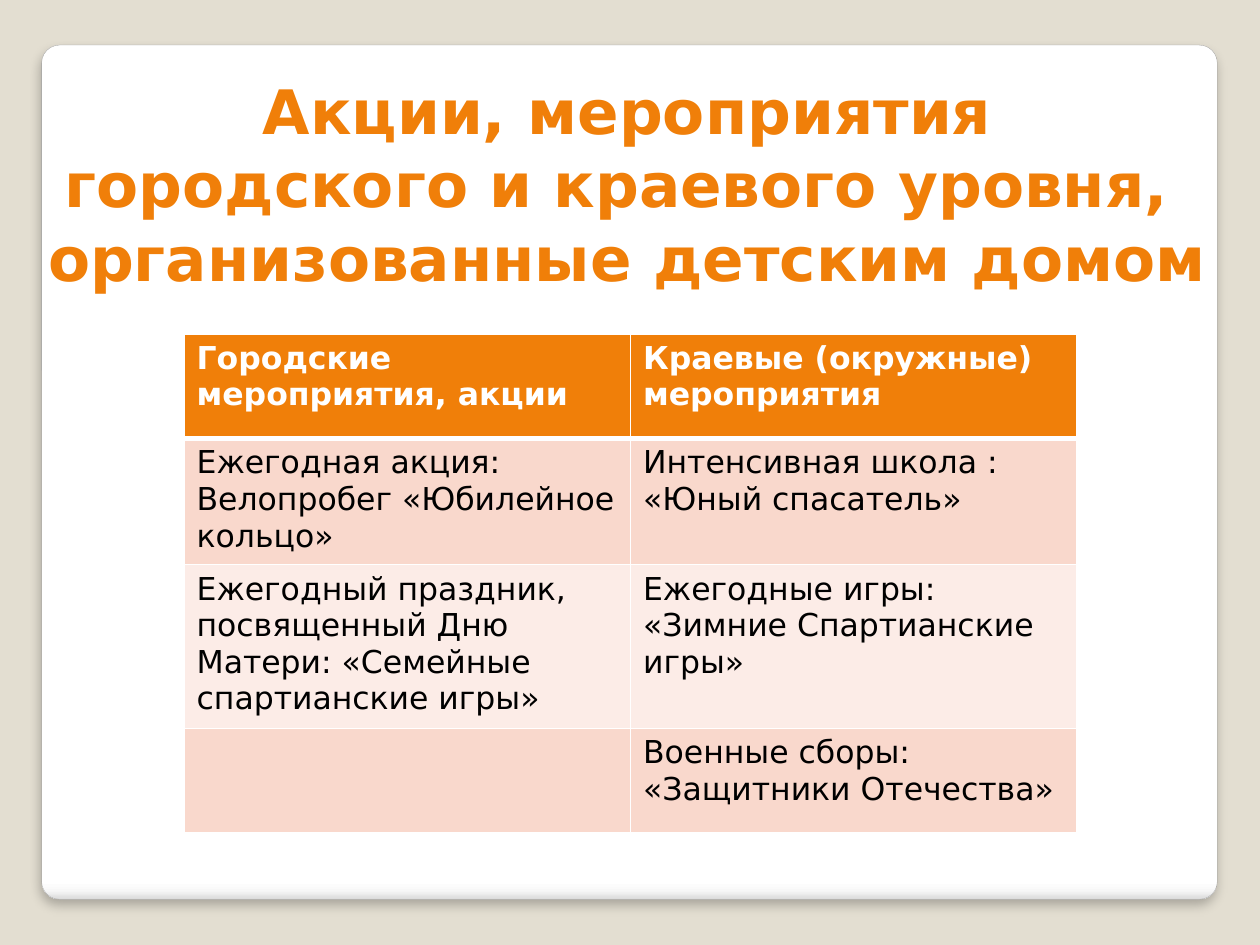
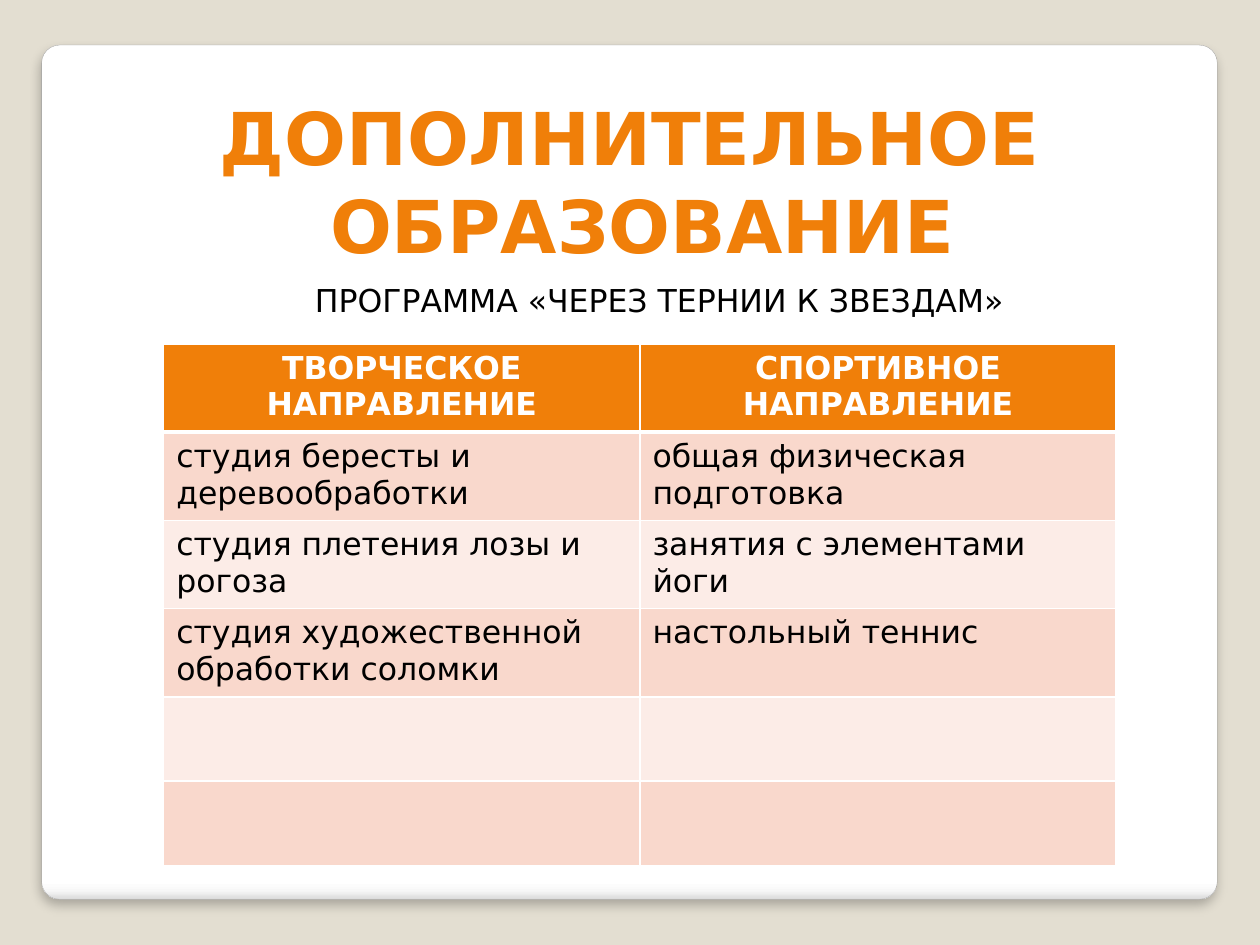
from lxml import etree
from pptx import Presentation
from pptx.dml.color import RGBColor
from pptx.enum.shapes import MSO_SHAPE
from pptx.enum.text import MSO_ANCHOR, PP_ALIGN
from pptx.oxml import parse_xml
from pptx.oxml.ns import nsdecls, qn
from pptx.util import Cm, Pt

ROUNDED = MSO_SHAPE.ROUNDED_RECTANGLE
MIDDLE = MSO_ANCHOR.MIDDLE
LEFT, CENTER = PP_ALIGN.LEFT, PP_ALIGN.CENTER

COLORS = {
    "backdrop": "E3DED1", "card": "FFFFFF", "card_line": "A4A4A4",
    "card_low": "F7F7F7", "card_edge": "DADADA", "shadow": "000000",
    "accent": "F07F09", "band_dark": "F9D8CC", "band_light": "FCECE7",
    "white": "FFFFFF", "text": "000000",
}
FONT = "DejaVu Sans"
TITLE = {"size": Pt(35), "bold": True, "color": "accent"}
BIG_TITLE = {**TITLE, "size": Pt(41.6)}
HEADER = {"size": Pt(18), "bold": True, "color": "white"}
BODY = {"size": Pt(18), "bold": False, "color": "text"}

CARD_BOX = (0.84, 0.91, 23.7, 17.22)
CARD_STOPS = ((0, "card"), (98, "card"), (99, "card_low"), (100, "card_edge"))

EVENTS = [
    ("Городские мероприятия, акции", "Краевые (окружные) мероприятия"),
    ("Ежегодная акция: Велопробег «Юбилейное кольцо»",
     "Интенсивная школа : «Юный спасатель»"),
    ("Ежегодный праздник, посвященный Дню Матери: «Семейные спартианские игры»",
     "Ежегодные игры: «Зимние Спартианские игры»"),
    ("", "Военные сборы: «Защитники Отечества»"),
]
STUDIOS = [
    ("ТВОРЧЕСКОЕ НАПРАВЛЕНИЕ", "СПОРТИВНОЕ НАПРАВЛЕНИЕ"),
    ("студия бересты и деревообработки", "общая физическая подготовка"),
    ("студия плетения лозы и рогоза", "занятия с элементами йоги"),
    ("студия художественной обработки соломки", "настольный теннис"),
    ("", ""),
    ("", ""),
]


def rgb(name):
    return RGBColor.from_string(COLORS[name])


def write(para, text, style, align):
    para.alignment = align
    span = para.add_run()
    span.text = text
    span.font.name = FONT
    for key, value in style.items():
        if key == "color":
            span.font.color.rgb = rgb(value)
        else:
            setattr(span.font, key, value)


def add_card(page, box):
    card = page.shapes.add_shape(ROUNDED, *map(Cm, box))
    card.adjustments[0] = 0.021
    card.line.color.rgb = rgb("card_line")
    card.line.width = Pt(0.16)
    stops = "".join(
        f'<a:gs pos="{place * 1000}"><a:srgbClr val="{COLORS[name]}"/></a:gs>'
        for place, name in CARD_STOPS)
    gradient = parse_xml(
        f'<a:gradFill {nsdecls("a")} rotWithShape="1"><a:gsLst>{stops}</a:gsLst>'
        '<a:lin ang="5400000" scaled="0"/></a:gradFill>')
    shadow = parse_xml(
        f'<a:effectLst {nsdecls("a")}><a:outerShdw blurRad="{Pt(6)}" dist="{Pt(4)}" '
        f'dir="5400000" rotWithShape="0"><a:srgbClr val="{COLORS["shadow"]}">'
        '<a:alpha val="25000"/></a:srgbClr></a:outerShdw></a:effectLst>')
    properties = card.element.spPr
    properties.find(qn("a:prstGeom")).addnext(gradient)
    properties.find(qn("a:ln")).addnext(shadow)


def add_text(page, box, lines, style, align=CENTER):
    frame = page.shapes.add_textbox(*map(Cm, box)).text_frame
    frame.word_wrap = False
    frame.vertical_anchor = MIDDLE
    for index, line in enumerate(lines):
        para = frame.add_paragraph() if index else frame.paragraphs[0]
        write(para, line, style, align)


def set_borders(cell, top, bottom):
    properties = cell._tc.get_or_add_tcPr()
    widths = {"lnL": 1, "lnR": 1, "lnT": top, "lnB": bottom}
    for index, (side, width) in enumerate(widths.items()):
        border = etree.Element(qn(f"a:{side}"), w=str(Pt(width)))
        fill = etree.SubElement(border, qn("a:solidFill"))
        etree.SubElement(fill, qn("a:srgbClr"), val=COLORS["white"])
        properties.insert(index, border)


def add_grid(page, box, rows, header_height, header_align):
    left, top, width, row_height = box
    height = header_height + row_height * (len(rows) - 1)
    table = page.shapes.add_table(
        len(rows), len(rows[0]), *map(Cm, (left, top, width, height))).table
    table.horz_banding = False
    for row_index, texts in enumerate(rows):
        is_header = row_index == 0
        table.rows[row_index].height = Cm(header_height if is_header else row_height)
        band = "band_dark" if row_index % 2 else "band_light"
        for column, text in enumerate(texts):
            cell = table.cell(row_index, column)
            cell.fill.solid()
            cell.fill.fore_color.rgb = rgb("accent" if is_header else band)
            set_borders(cell, 3 if row_index == 1 else 1, 3 if is_header else 1)
            if text:
                write(cell.text_frame.paragraphs[0], text,
                      HEADER if is_header else BODY,
                      header_align if is_header else LEFT)


def add_page(deck):
    page = deck.slides.add_slide(deck.slide_layouts[6])
    page.background.fill.solid()
    page.background.fill.fore_color.rgb = rgb("backdrop")
    add_card(page, CARD_BOX)
    return page


def build_events(deck):
    page = add_page(deck)
    add_text(page, (0.66, 1.32, 23.98, 4.75),
             ["Акции, мероприятия", "городского и краевого уровня, ",
              "организованные детским домом"], TITLE)
    add_grid(page, (3.71, 6.73, 18, 2.11), EVENTS, 2.11, LEFT)


def build_studios(deck):
    page = add_page(deck)
    add_text(page, (4.11, 1.73, 17.17, 3.81),
             ["ДОПОЛНИТЕЛЬНОЕ", " ОБРАЗОВАНИЕ"], BIG_TITLE)
    add_grid(page, (3.3, 6.93, 19.2, 1.7), STUDIOS, 1.32, CENTER)
    add_text(page, (6.1, 5.54, 14.55, 1.02),
             ["ПРОГРАММА «ЧЕРЕЗ ТЕРНИИ К ЗВЕЗДАМ»"], BODY, LEFT)


def main():
    deck = Presentation()
    deck.slide_width, deck.slide_height = Cm(25.4), Cm(19.05)
    build_events(deck)
    build_studios(deck)
    deck.save("out.pptx")


if __name__ == "__main__":
    main()
